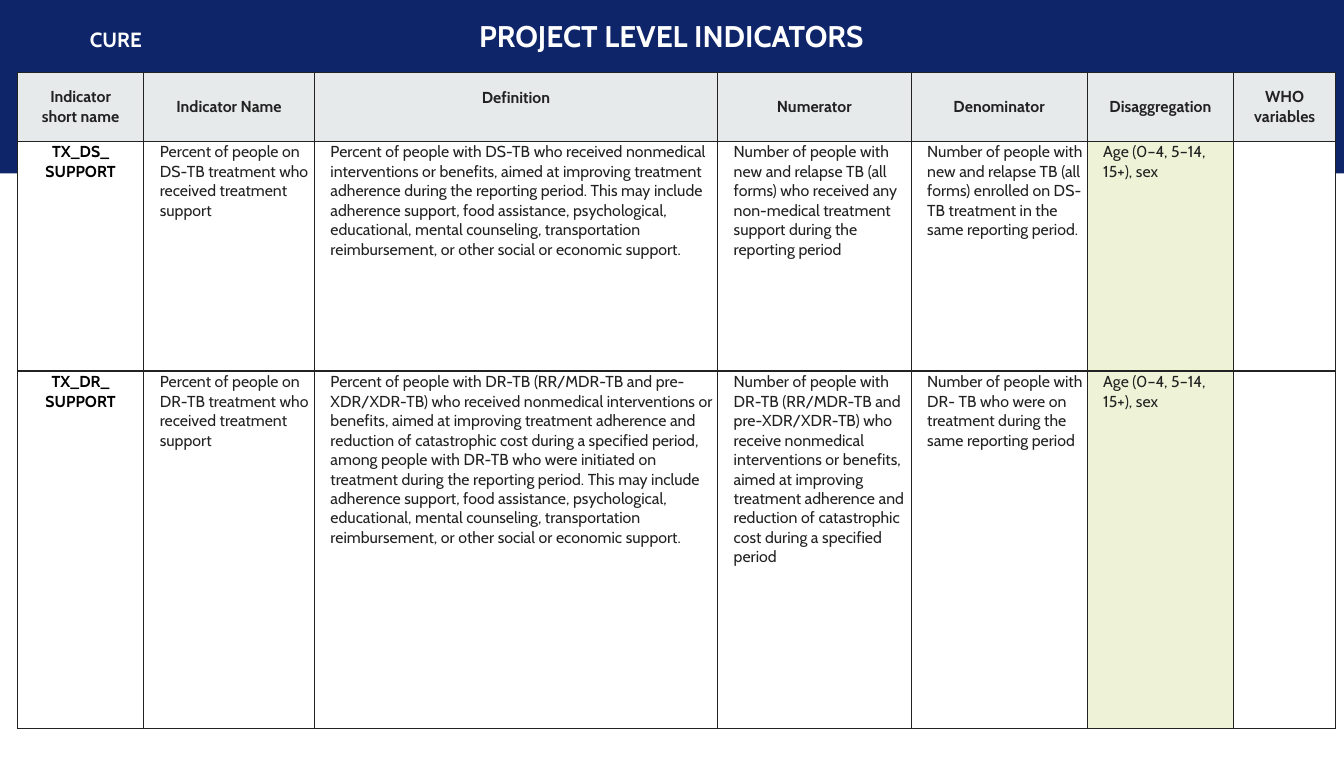
from copy import deepcopy
from dataclasses import dataclass

from lxml.etree import SubElement
from pptx import Presentation
from pptx.dml.color import RGBColor
from pptx.enum.shapes import MSO_SHAPE
from pptx.enum.text import MSO_ANCHOR, MSO_AUTO_SIZE, PP_ALIGN
from pptx.oxml.ns import qn
from pptx.util import Inches, Pt


@dataclass(frozen=True)
class Theme:
    font: str = "Cabin"
    navy: str = "0E256A"
    white: str = "FFFFFF"
    ink: str = "222222"
    black: str = "000000"
    header: str = "E7EAEB"
    highlight: str = "EEF3D7"
    title_size: float = 16
    label_size: float = 11
    table_size: float = 8.5
    border: float = 0.75


COLUMN_WIDTHS = [0.94, 1.27, 3, 1.44, 1.31, 1.09, 0.76]
ROW_HEIGHTS = [0.51, 1.71, 2.66]
DISAGGREGATION = 5

HEADINGS = ["Indicator short name", "Indicator Name", "Definition", "Numerator",
            "Denominator", "Disaggregation", "WHO variables"]
SUPPORT_KINDS = ("adherence support, food assistance, psychological, educational, "
                 "mental counseling, transportation reimbursement, or other social "
                 "or economic support.")
AGE_AND_SEX = "Age (0–4, 5–14, 15+), sex"
INDICATORS = [
    ["TX_DS_\nSUPPORT",
     "Percent of people on DS-TB treatment who received treatment support",
     "Percent of people with DS-TB who received nonmedical interventions or benefits, "
     "aimed at improving treatment adherence during the reporting period. "
     "This may include " + SUPPORT_KINDS,
     "Number of people with new and relapse TB (all forms) who received any "
     "non-medical treatment support during the reporting period",
     "Number of people with new and relapse TB (all forms) enrolled on DS-TB "
     "treatment in the same reporting period.",
     AGE_AND_SEX, ""],
    ["TX_DR_\nSUPPORT",
     "Percent of people on DR-TB treatment who received treatment support",
     "Percent of people with DR-TB (RR/MDR-TB and pre-XDR/XDR-TB) who received "
     "nonmedical interventions or benefits, aimed at improving treatment adherence "
     "and reduction of catastrophic cost during a specified period, among people "
     "with DR-TB who were initiated on treatment during the reporting period. "
     "This may include " + SUPPORT_KINDS,
     "Number of people with DR-TB (RR/MDR-TB and pre-XDR/XDR-TB) who receive "
     "nonmedical interventions or benefits, aimed at improving treatment adherence "
     "and reduction of catastrophic cost during a specified period",
     "Number of people with DR- TB who were on treatment during the same "
     "reporting period",
     AGE_AND_SEX, ""],
]


def write(frame, text, *, font, size, color, bold=False, align=PP_ALIGN.LEFT):
    """Write one paragraph; a newline in the text becomes a line break."""
    para = frame.paragraphs[0]
    para.alignment = align
    para.text = text
    for span in para.runs:
        span.font.name = font
        span.font.size = Pt(size)
        span.font.bold = bold
        span.font.color.rgb = RGBColor.from_string(color)
    # Line breaks take the format of the text around them
    for line_break in para._p.findall(qn("a:br")):
        line_break.append(deepcopy(para.runs[0]._r.rPr))


class SlideBuilder:
    def __init__(self, page, theme):
        self.page = page
        self.theme = theme

    def band(self, left, top, width, height):
        box = self.page.shapes.add_shape(
            MSO_SHAPE.RECTANGLE, Inches(left), Inches(top), Inches(width), Inches(height))
        box.shadow.inherit = False
        box.fill.solid()
        box.fill.fore_color.rgb = RGBColor.from_string(self.theme.navy)
        box.line.fill.background()
        # Behind the title placeholder
        self.page.shapes._spTree.insert(2, box._element)

    def title(self, text, left, top, width, height):
        box = self.page.shapes.title
        box.left, box.top = Inches(left), Inches(top)
        box.width, box.height = Inches(width), Inches(height)
        frame = box.text_frame
        frame.word_wrap = True
        frame.auto_size = MSO_AUTO_SIZE.SHAPE_TO_FIT_TEXT
        frame.vertical_anchor = MSO_ANCHOR.TOP
        write(frame, text, font=self.theme.font, size=self.theme.title_size,
              color=self.theme.white, bold=True, align=PP_ALIGN.CENTER)

    def label(self, text, left, top, width, height):
        box = self.page.shapes.add_textbox(
            Inches(left), Inches(top), Inches(width), Inches(height))
        frame = box.text_frame
        frame.word_wrap = False
        frame.auto_size = MSO_AUTO_SIZE.SHAPE_TO_FIT_TEXT
        write(frame, text, font=self.theme.font, size=self.theme.label_size,
              color=self.theme.white, bold=True)

    def borders(self, cell):
        properties = cell._tc.get_or_add_tcPr()
        for index, side in enumerate(("a:lnL", "a:lnR", "a:lnT", "a:lnB")):
            line = SubElement(properties, qn(side), w=str(Pt(self.theme.border)))
            fill = SubElement(line, qn("a:solidFill"))
            SubElement(fill, qn("a:srgbClr"), val=self.theme.ink)
            properties.insert(index, line)

    def cell(self, cell, text, fill, **text_format):
        cell.fill.solid()
        cell.fill.fore_color.rgb = RGBColor.from_string(fill)
        self.borders(cell)
        if text:
            write(cell.text_frame, text, font=self.theme.font,
                  size=self.theme.table_size, **text_format)

    def table(self, headings, rows, left, top):
        theme = self.theme
        table = self.page.shapes.add_table(
            len(rows) + 1, len(headings), Inches(left), Inches(top),
            Inches(sum(COLUMN_WIDTHS)), Inches(sum(ROW_HEIGHTS))).table
        table.first_row = table.horz_banding = False
        for column, width in zip(table.columns, COLUMN_WIDTHS):
            column.width = Inches(width)
        for row, height in zip(table.rows, ROW_HEIGHTS):
            row.height = Inches(height)

        # Heading row; "Definition" sits a little higher than the others
        for index, heading in enumerate(headings):
            cell = table.cell(0, index)
            cell.vertical_anchor = MSO_ANCHOR.MIDDLE
            if heading == "Definition":
                cell.margin_bottom = Inches(0.19)
            self.cell(cell, heading, theme.header, color=theme.ink, bold=True,
                      align=PP_ALIGN.CENTER)

        # Indicator rows: bold centred short name, then plain text
        for row_index, row in enumerate(rows, start=1):
            for index, text in enumerate(row):
                cell = table.cell(row_index, index)
                is_name = index == 0
                cell.margin_left = Inches(0.01 if is_name else 0.12)
                cell.margin_top = cell.margin_right = Inches(0.01)
                cell.margin_bottom = 0
                self.cell(cell, text,
                          theme.highlight if index == DISAGGREGATION else theme.white,
                          color=theme.black if is_name else theme.ink, bold=is_name,
                          align=PP_ALIGN.CENTER if is_name else PP_ALIGN.LEFT)


def main():
    deck = Presentation()
    deck.slide_width, deck.slide_height = Inches(10), Inches(5.67)
    title_only = deck.slide_layouts[5]
    builder = SlideBuilder(deck.slides.add_slide(title_only), Theme())

    # Header band and title
    builder.band(0, 0, 10, 1.29)
    builder.title("PROJECT LEVEL INDICATORS", 3.17, 0.08, 3.65, 0.37)

    # Indicator table and section label
    builder.table(HEADINGS, INDICATORS, 0.13, 0.54)
    builder.label("CURE", 0.57, 0.15, 0.65, 0.29)

    deck.save("out.pptx")


if __name__ == "__main__":
    main()
